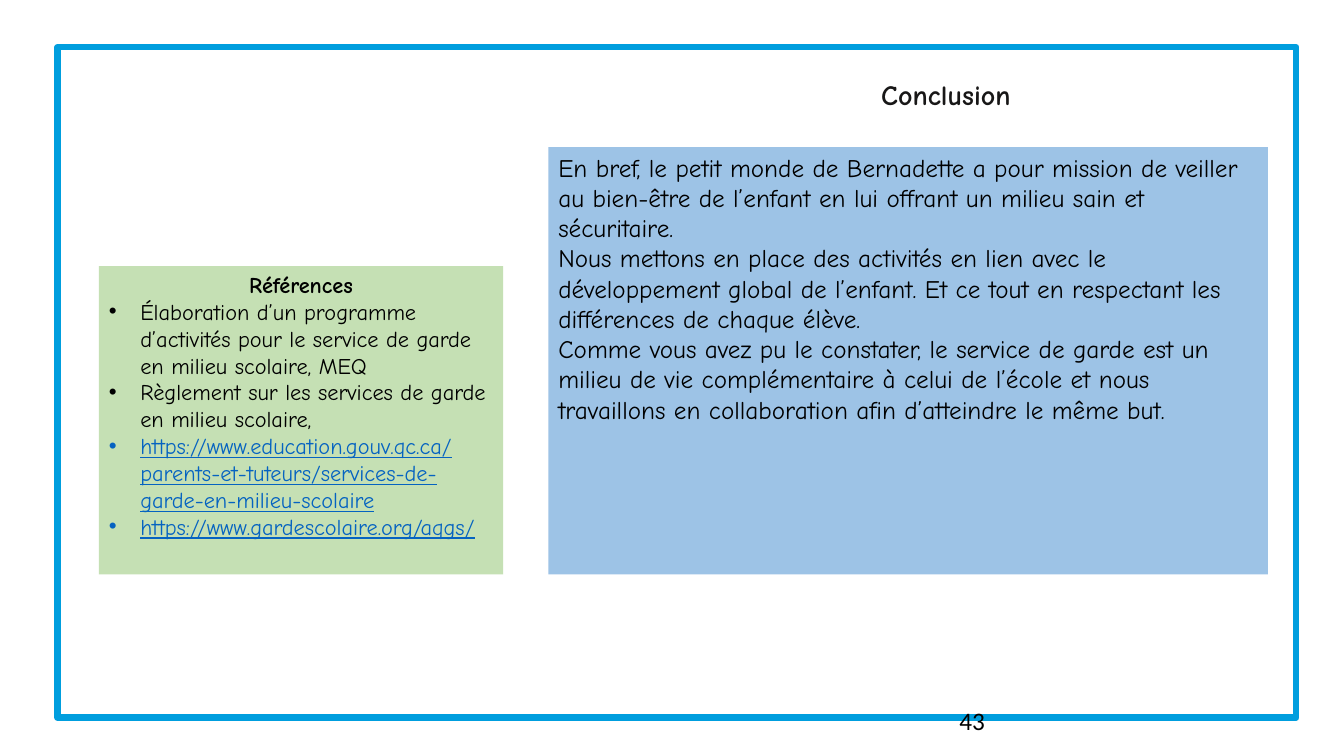
from dataclasses import dataclass

import pptx
import pptx.dml.color
import pptx.enum.shapes
import pptx.enum.text
import pptx.oxml.ns
import pptx.util
from lxml import etree

Pt = pptx.util.Pt
ALIGN = pptx.enum.text.PP_ALIGN
ANCHOR = pptx.enum.text.MSO_ANCHOR


@dataclass(frozen=True)
class Theme:
    frame: str = "009EDE"
    title: str = "181717"
    ink: str = "000000"
    link: str = "0563C1"
    message_fill: str = "9DC3E6"
    references_fill: str = "C5E0B4"
    font: str = "Comic Neue"
    number_font: str = "Calibri"
    title_size: float = 20
    body_size: float = 18
    reference_size: float = 16


THEME = Theme()

MESSAGE = [
    "En bref, le petit monde de Bernadette a pour mission de veiller au bien-être de l’enfant "
    "en lui offrant un milieu sain et sécuritaire.",
    "Nous mettons en place des activités en lien avec le développement global de l’enfant. "
    "Et ce tout en respectant les différences de chaque élève.",
    "Comme vous avez pu le constater, le service de garde est un milieu de vie complémentaire "
    "à celui de l’école et nous travaillons en collaboration afin d’atteindre le même but.",
]
REFERENCES = [
    "Élaboration d’un programme d’activités pour le service de garde en milieu scolaire, MEQ",
    "Règlement sur les services de garde en milieu scolaire,",
]
LINKS = [
    "https://www.education.gouv.qc.ca/parents-et-tuteurs/services-de-garde-en-milieu-scolaire",
    "https://www.gardescolaire.org/aqgs/",
]


def color(value):
    return pptx.dml.color.RGBColor.from_string(value)


def add_bullet(paragraph, indent):
    """Give the paragraph a round bullet with a hanging indent in points."""
    properties = paragraph._p.get_or_add_pPr()
    properties.set("marL", str(Pt(indent)))
    properties.set("indent", str(-Pt(indent)))
    for tag, name, value in (("a:buFont", "typeface", "Arial"), ("a:buChar", "char", "•")):
        etree.SubElement(properties, pptx.oxml.ns.qn(tag)).set(name, value)


def write(frame, text, size=THEME.body_size, font=THEME.font, ink=THEME.ink, bold=False,
          underline=False, align=ALIGN.LEFT, bullet_indent=None):
    """Write one paragraph, using the first one while it is still empty."""
    first = frame.paragraphs[0]
    paragraph = frame.add_paragraph() if first.runs else first
    paragraph.alignment = align
    paragraph.line_spacing = 1.0
    paragraph.space_before = Pt(0)
    if bullet_indent:
        add_bullet(paragraph, bullet_indent)
    run = paragraph.add_run()
    run.text = text
    run.font.name = font
    run.font.size = Pt(size)
    run.font.bold = bold
    run.font.underline = underline
    run.font.color.rgb = color(ink)


def prepare(frame, anchor=ANCHOR.TOP):
    frame.word_wrap = True
    frame.auto_size = pptx.enum.text.MSO_AUTO_SIZE.NONE
    frame.vertical_anchor = anchor
    frame.margin_left = frame.margin_right = Pt(7.2)
    frame.margin_top = frame.margin_bottom = Pt(3.6)
    return frame


def add_panel(slide, box, fill=None, line=None):
    """Add a rectangle and return its text frame."""
    shape = slide.shapes.add_shape(pptx.enum.shapes.MSO_SHAPE.RECTANGLE, *map(Pt, box))
    shape.shadow.inherit = False
    if fill:
        shape.fill.solid()
        shape.fill.fore_color.rgb = color(fill)
    else:
        shape.fill.background()
    if line:
        shape.line.color.rgb = color(line)
        shape.line.width = Pt(4.5)
    else:
        shape.line.fill.background()
    return prepare(shape.text_frame)


def place_title(slide, box):
    title = slide.shapes.title
    title.left, title.top, title.width, title.height = map(Pt, box)
    write(prepare(title.text_frame, ANCHOR.BOTTOM), "Conclusion", size=THEME.title_size,
          ink=THEME.title, bold=True, align=ALIGN.CENTER)


def add_message(slide, box):
    frame = add_panel(slide, box, fill=THEME.message_fill)
    for text in MESSAGE:
        write(frame, text)


def add_references(slide, box):
    frame = add_panel(slide, box, fill=THEME.references_fill)
    size = THEME.reference_size
    write(frame, "Références", size=size, bold=True, align=ALIGN.CENTER)
    for text in REFERENCES:
        write(frame, text, size=size, bullet_indent=22.5)
    for text in LINKS:
        write(frame, text, size=size, ink=THEME.link, underline=True, bullet_indent=22.5)


def add_page_number(slide, box):
    frame = prepare(slide.shapes.add_textbox(*map(Pt, box)).text_frame)
    write(frame, "43", font=THEME.number_font)


def main():
    presentation = pptx.Presentation()
    presentation.slide_width, presentation.slide_height = Pt(960), Pt(540)
    slide = presentation.slides.add_slide(presentation.slide_layouts[5])
    add_panel(slide, (41, 33.8, 885, 478.8), line=THEME.frame)
    place_title(slide, (391.7, 31, 568, 51.8))
    add_message(slide, (391.7, 105.1, 514, 305.3))
    add_page_number(slide, (678.2, 500.4, 216, 28.8))
    add_references(slide, (70.6, 190.1, 288.7, 220.3))
    presentation.save("out.pptx")


if __name__ == "__main__":
    main()
